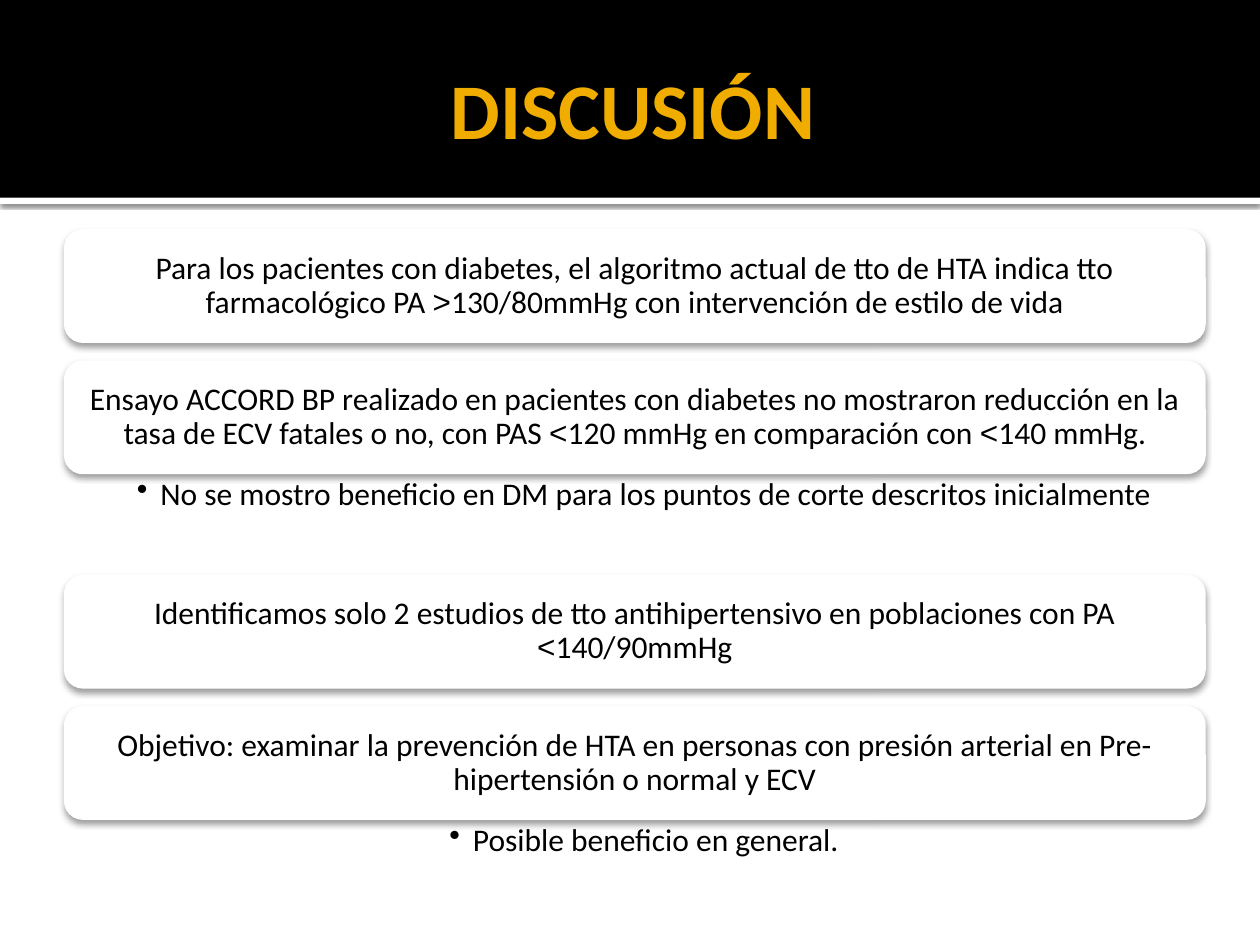
import itertools

import pptx
import pptx.dml.color
import pptx.enum.shapes
import pptx.enum.text
import pptx.oxml
import pptx.oxml.ns
import pptx.util

Pt = pptx.util.Pt
SHAPE = pptx.enum.shapes.MSO_SHAPE
ANCHOR = pptx.enum.text.MSO_ANCHOR
CENTER = pptx.enum.text.PP_ALIGN.CENTER

LEFT, WIDTH, TOP = 36.5, 652.5, 131
CARD_H, NOTE_H, GAP = 65, 57.5, 10
BAND_H = 113

ITEMS = [
    ("Para los pacientes con diabetes, el algoritmo actual de tto de HTA indica tto "
     "farmacológico PA >130/80mmHg con intervención de estilo de vida", None),
    ("Ensayo ACCORD BP realizado en pacientes con diabetes no mostraron reducción en la "
     "tasa de ECV fatales o no, con PAS <120 mmHg en comparación con <140 mmHg.",
     "No se mostro beneficio en DM para los puntos de corte descritos inicialmente"),
    ("Identificamos solo 2 estudios de tto antihipertensivo en poblaciones con PA "
     "<140/90mmHg", None),
    ("Objetivo: examinar la prevención de HTA en personas con presión arterial en "
     "Pre-hipertensión o normal y ECV", "Posible beneficio en general."),
]


def rgb(value):
    return pptx.dml.color.RGBColor.from_string(value)


def add_run(p, text, size, color, font="Calibri", bold=False):
    r = p.add_run()
    r.text = text
    r.font.name = font
    r.font.size = Pt(size)
    r.font.bold = bold
    r.font.color.rgb = rgb(color)


def set_frame(tf, anchor, left, top, right, bottom):
    tf.word_wrap = True
    tf.auto_size = pptx.enum.text.MSO_AUTO_SIZE.NONE
    tf.vertical_anchor = anchor
    tf.margin_left, tf.margin_top = Pt(left), Pt(top)
    tf.margin_right, tf.margin_bottom = Pt(right), Pt(bottom)


def add_body(p, text, space_after):
    p.alignment = CENTER
    p.line_spacing = 0.9
    p.space_after = Pt(space_after)
    for is_sign, chars in itertools.groupby(text, lambda c: c in "<>"):
        add_run(p, "".join(chars), 18, "000000", "Arial" if is_sign else "Calibri")


def add_shadow(sp, alpha, blur, dist):
    sp.element.spPr.append(pptx.oxml.parse_xml(
        f'<a:effectLst {pptx.oxml.ns.nsdecls("a")}>'
        f'<a:outerShdw blurRad="{Pt(blur)}" dist="{Pt(dist)}" dir="5400000" rotWithShape="0">'
        f'<a:srgbClr val="000000"><a:alpha val="{alpha * 1000}"/></a:srgbClr>'
        '</a:outerShdw></a:effectLst>'))


def add_block(s, kind, left, top, width, height, fill, shadow=None):
    sp = s.shapes.add_shape(kind, Pt(left), Pt(top), Pt(width), Pt(height))
    sp.fill.solid()
    sp.fill.fore_color.rgb = rgb(fill)
    sp.line.fill.background()
    if shadow:
        add_shadow(sp, *shadow)
    else:
        sp.shadow.inherit = False
    return sp


def add_title(s, text):
    sp = s.shapes.title
    sp.left, sp.top, sp.width, sp.height = Pt(36), Pt(12), Pt(648), Pt(99)
    s.shapes.element.append(sp.element)
    set_frame(sp.text_frame, ANCHOR.MIDDLE, 7.2, 3.6, 3.6, 3.6)
    p = sp.text_frame.paragraphs[0]
    p.alignment = CENTER
    add_run(p, text, 45, "F0AD00", bold=True)


def add_card(s, top, text):
    sp = add_block(s, SHAPE.ROUNDED_RECTANGLE, LEFT, top, WIDTH, CARD_H, "FFFFFF", (38, 3.5, 2))
    set_frame(sp.text_frame, ANCHOR.MIDDLE, 2, 2, 2, 2)
    add_body(sp.text_frame.paragraphs[0], text, 6.3)


def add_note(s, top, text):
    sp = s.shapes.add_textbox(Pt(LEFT), Pt(top), Pt(WIDTH), Pt(NOTE_H))
    set_frame(sp.text_frame, ANCHOR.TOP, 20.7, 2.3, 10.2, 2.3)
    p = sp.text_frame.paragraphs[0]
    add_body(p, text, 3.6)
    pPr = p._p.get_or_add_pPr()
    pPr.set("marL", str(Pt(13.5)))
    pPr.set("indent", str(-Pt(13.5)))
    pPr.append(pptx.oxml.parse_xml(f'<a:buChar {pptx.oxml.ns.nsdecls("a")} char="•"/>'))


def main():
    prs = pptx.Presentation()
    prs.slide_width, prs.slide_height = Pt(720), Pt(540)
    s = prs.slides.add_slide(prs.slide_layouts[5])
    add_block(s, SHAPE.RECTANGLE, 0, BAND_H, 720, 3.6, "FFFFFF", (60, 2.5, 0.8))
    add_block(s, SHAPE.RECTANGLE, 0, 0, 720, BAND_H, "000000")
    add_title(s, "DISCUSIÓN")
    top = TOP
    for text, note in ITEMS:
        add_card(s, top, text)
        top += CARD_H
        if note:
            add_note(s, top, note)
        top += NOTE_H if note else GAP
    prs.save("out.pptx")


if __name__ == "__main__":
    main()
